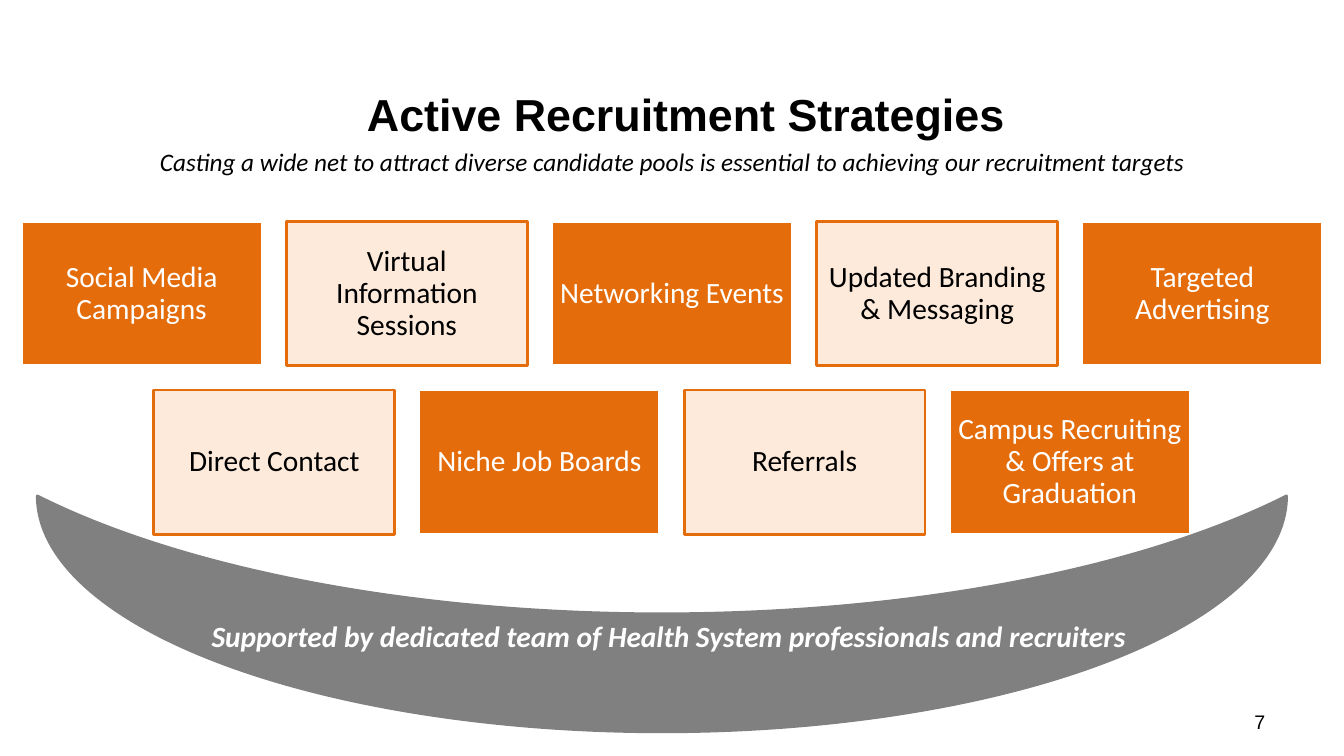
from pptx import Presentation
from pptx.dml.color import RGBColor
from pptx.enum.shapes import MSO_SHAPE
from pptx.enum.text import MSO_ANCHOR, PP_ALIGN
from pptx.util import Inches, Pt

COLORS = {
    "orange": "E46C0A",
    "peach": "FDEADA",
    "gray": "808080",
    "white": "FFFFFF",
    "black": "000000",
}
STRATEGIES = [
    ["Social Media Campaigns", "Virtual Information Sessions", "Networking Events",
     "Updated Branding & Messaging", "Targeted Advertising"],
    ["Direct Contact", "Niche Job Boards", "Referrals",
     "Campus Recruiting & Offers at Graduation"],
]
CARD_W, CARD_H, GAP = 2.39, 1.43, 0.24


def rgb(name):
    return RGBColor.from_string(COLORS[name])


def set_text(sp, text, size, color="black", font="Calibri", align=PP_ALIGN.CENTER,
             anchor=MSO_ANCHOR.TOP, inset=(0.1, 0.05), bold=False, italic=False, wrap=True):
    tf = sp.text_frame
    tf.word_wrap = wrap
    tf.vertical_anchor = anchor
    tf.margin_left = tf.margin_right = Inches(inset[0])
    tf.margin_top = tf.margin_bottom = Inches(inset[1])
    p = tf.paragraphs[0]
    p.alignment = align
    r = p.add_run()
    r.text = text
    r.font.name = font
    r.font.size = Pt(size)
    r.font.bold = bold
    r.font.italic = italic
    r.font.color.rgb = rgb(color)
    return p


def add_filled(s, preset, box, fill, line):
    sp = s.shapes.add_shape(preset, *map(Inches, box))
    sp.shadow.inherit = False
    sp.fill.solid()
    sp.fill.fore_color.rgb = rgb(fill)
    sp.line.color.rgb = rgb(line)
    sp.line.width = Pt(2)
    return sp


def add_heading(s, x, y, w):
    title = s.shapes.title
    title.left, title.top = Inches(x + 1.26), Inches(y)
    title.width, title.height = Inches(9.25), Inches(0.54)
    set_text(title, "Active Recruitment Strategies", 32, font="Arial", inset=(0, 0), bold=True)
    subtitle = s.shapes.add_textbox(Inches(x), Inches(y + 0.54), Inches(w), Inches(0.4))
    set_text(subtitle, "Casting a wide net to attract diverse candidate pools is essential "
             "to achieving our recruitment targets", 18, italic=True)


def add_strategies(s, x, y, w):
    index = 0
    for row, names in enumerate(STRATEGIES):
        row_w = len(names) * (CARD_W + GAP) - GAP
        left = x + (w - row_w) / 2
        top = y + row * (CARD_H + GAP)
        for col, name in enumerate(names):
            box = (left + col * (CARD_W + GAP), top, CARD_W, CARD_H)
            solid = index % 2 == 0
            fill, line, color = (("orange", "white", "white") if solid
                                 else ("peach", "orange", "black"))
            card = add_filled(s, MSO_SHAPE.RECTANGLE, box, fill, line)
            p = set_text(card, name, 21, color, anchor=MSO_ANCHOR.MIDDLE, inset=(0.08, 0.09))
            p.line_spacing = 0.9
            index += 1


def add_support(s, x, y, w, h):
    box = (x + (w - h) / 2, y + (h - w) / 2, h, w)
    moon = add_filled(s, MSO_SHAPE.MOON, box, "gray", "gray")
    moon.rotation = 270
    label = s.shapes.add_textbox(Inches(x + 1.63), Inches(y + 1.16), Inches(9.37), Inches(0.45))
    set_text(label, "Supported by dedicated team of Health System professionals and recruiters",
             21, "white", align=PP_ALIGN.LEFT, bold=True, italic=True, wrap=False)


def add_page_number(s, x, y, w, h):
    number = s.shapes.add_textbox(Inches(x), Inches(y), Inches(w), Inches(h))
    p = set_text(number, "7", 14, font="Arial", align=PP_ALIGN.LEFT, inset=(0, 0))
    p.line_spacing = Pt(16.5)


def main():
    prs = Presentation()
    prs.slide_width, prs.slide_height = Inches(13.33), Inches(7.5)
    s = prs.slides.add_slide(prs.slide_layouts[5])
    add_heading(s, 0.92, 0.86, 11.5)
    add_strategies(s, 0.21, 2.2, 12.91)
    add_support(s, 0.37, 4.92, 12.39, 2.34)
    add_page_number(s, 12.44, 7.05, 0.28, 0.3)
    prs.save("out.pptx")


if __name__ == "__main__":
    main()
